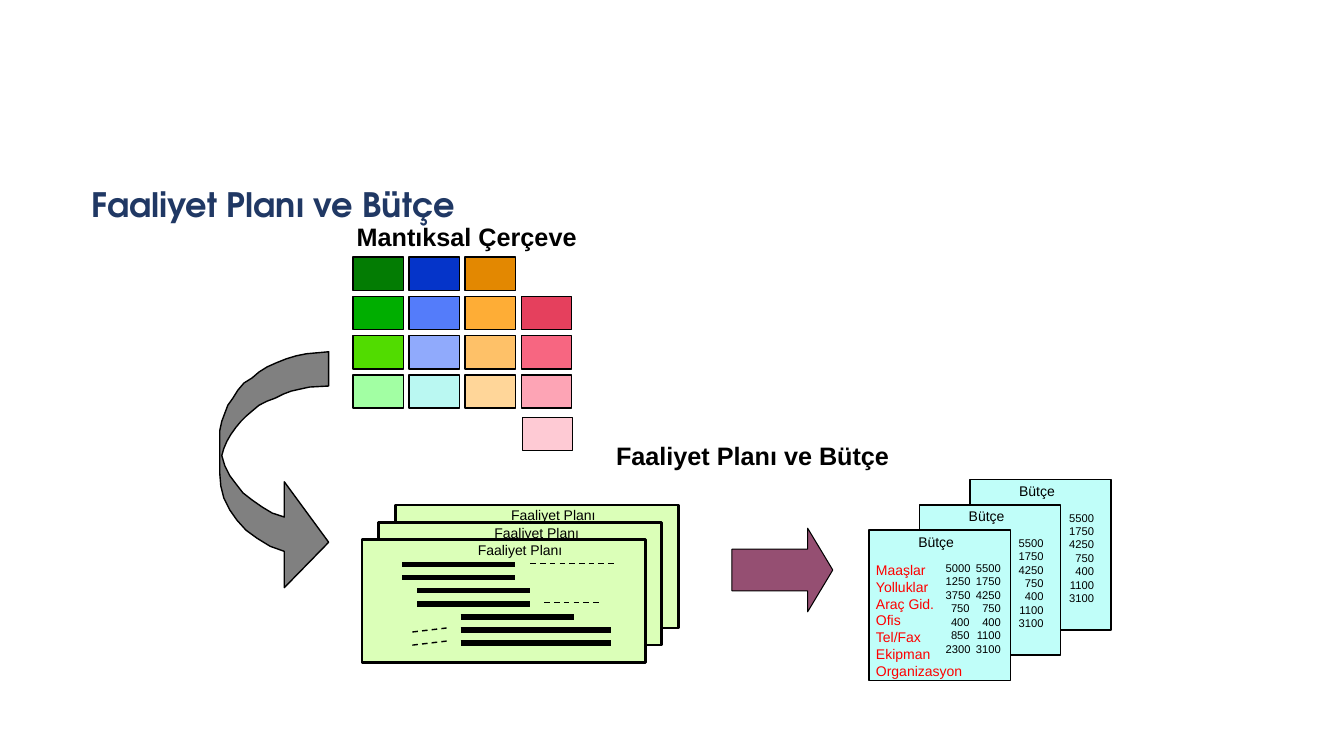
from lxml import etree
from pptx import Presentation
from pptx.dml.color import RGBColor as Rgb
from pptx.enum.dml import MSO_LINE as Dash
from pptx.enum.shapes import MSO_CONNECTOR as Link, MSO_SHAPE as Shape
from pptx.enum.text import MSO_ANCHOR as Anchor, PP_ALIGN as Align
from pptx.oxml.ns import qn
from pptx.util import Inches, Pt

# The grid: 1333 columns by 750 rows
COLS, ROWS = 1333, 750
UNIT = Inches(0.01)

HUES = {"ink": "000000", "red": "FF0000", "navy": "203864", "gray": "808080",
        "plum": "954F72", "lime": "DBFFB8", "aqua": "C0FEF9"}
# Matrix colours by row, one for each column
TILES = [("037C03", "0534C9", "E38801", None),
         ("00AE00", "547CFA", "FEAD36", "E5405D"),
         ("51DC00", "90AAFC", "FEC168", "F76681"),
         ("A2FFA3", "BAF8F2", "FFD699", "FDA4B5")]
LAST = "FECAD4"

HEAD = {"name": "Arial", "size": Pt(18), "bold": True}
LABEL = {"name": "Arial", "size": Pt(10)}
SUM = {"name": "Arial", "size": Pt(8)}
TITLE = {"name": "TeX Gyre Adventor", "size": Pt(24), "bold": True}

ITEMS = ["Maaşlar", "Yolluklar", "Araç Gid.", "Ofis", "Tel/Fax", "Ekipman",
         "Organizasyon"]
OLD = [5000, 1250, 3750, 750, 400, 850, 2300]
NEW = [5500, 1750, 4250, 750, 400, 1100, 3100]

# Bars of the plan: left, right, row
BARS = [(40, 152), (40, 152), (55, 167), (55, 167), (98, 210), (98, 247),
        (98, 247)]
DASHES = [(167, 24, 251, 24), (181, 63, 236, 63), (50, 92, 84, 88),
          (50, 105, 84, 101)]
# Outline of the bent arrow, from the top of its tail
BEND = [(108, 0), (97, 1), (86, 2), (76, 4), (66, 7), (56, 11), (47, 15),
        (39, 20), (32, 26), (24, 31), (18, 38), (13, 46), (8, 53), (5, 61),
        (2, 69), (0, 78), (0, 121), (1, 133), (4, 145), (10, 157), (17, 167),
        (26, 177), (37, 185), (50, 193), (64, 198), (64, 234), (108, 189),
        (64, 129), (64, 164), (52, 160), (42, 154), (32, 147), (23, 140),
        (16, 131), (10, 123), (5, 113), (2, 103), (4, 96), (7, 89), (11, 82),
        (16, 75), (21, 69), (26, 64), (33, 58), (39, 53), (47, 49), (55, 46),
        (63, 42), (71, 39), (80, 37), (89, 35), (108, 34)]


def grid(*cells):
    return [int(cell * UNIT) for cell in cells]


def paint(shape, fill, width=1):
    shape.shadow.inherit = False
    shape.fill.solid()
    shape.fill.fore_color.rgb = Rgb.from_string(fill)
    shape.line.color.rgb = Rgb.from_string(HUES["ink"])
    shape.line.width = Pt(width)


def block(slide, box, fill, width=1, kind=Shape.RECTANGLE):
    shape = slide.shapes.add_shape(kind, *grid(*box))
    paint(shape, fill, width)
    return shape


def stroke(slide, ends, width, dash=None):
    line = slide.shapes.add_connector(Link.STRAIGHT, *grid(*ends))
    line.line.color.rgb = Rgb.from_string(HUES["ink"])
    line.line.width = Pt(width)
    if dash:
        line.line.dash_style = dash
    etree.SubElement(line._element.spPr, qn("a:effectLst"))


def write(slide, box, lines, font, hue="ink", align=Align.LEFT, wrap=False,
          tabs=()):
    """Put one paragraph per line; tabs are right stops in grid columns."""
    frame = slide.shapes.add_textbox(*grid(*box)).text_frame
    frame.word_wrap = wrap
    frame.vertical_anchor = Anchor.TOP
    for i, line in enumerate(lines):
        para = frame.add_paragraph() if i else frame.paragraphs[0]
        para.alignment = align
        if tabs:
            stops = etree.SubElement(para._p.get_or_add_pPr(), qn("a:tabLst"))
            for stop in grid(*tabs):
                etree.SubElement(stops, qn("a:tab"), pos=str(stop), algn="r")
        run = para.add_run()
        run.text = line
        for key, value in font.items():
            setattr(run.font, key, value)
        run.font.color.rgb = Rgb.from_string(HUES[hue])


def matrix(slide, x, y):
    wide, high, across, down = 50, 33, 55.7, 39
    write(slide, (x - 6, y - 40, 240, 40), ["Mantıksal Çerçeve"], HEAD)
    for r, row in enumerate(TILES):
        for c, fill in enumerate(row):
            if fill:
                block(slide, (x + c * across, y + r * down, wide, high), fill)
    block(slide, (x + 3 * across + 1, y + 4 * down + 3, wide, high), LAST)


def sheet(slide, x, y):
    block(slide, (x, y, 281, 122), HUES["lime"], 2)
    write(slide, (x + 105, y - 3, 105, 27), ["Faaliyet Planı"], LABEL)


def plans(slide, x, y):
    """Stack three sheets towards the front one at x, y and fill that one."""
    for back in (2, 1, 0):
        sheet(slide, x + 16.5 * back, y - 17 * back)
    for i, (left, right) in enumerate(BARS):
        row = y + 25 + 13 * i
        stroke(slide, (x + left, row, x + right, row), 4)
    for a, b, c, d in DASHES:
        stroke(slide, (x + a, y + b, x + c, y + d), 1, Dash.DASH)


def budget(slide, x, y):
    block(slide, (x, y, 140, 149), HUES["aqua"])
    write(slide, (x + 39, y - 2, 56, 27), ["Bütçe"], LABEL)


def costs(slide, x, y):
    """Stack three budgets towards the front one at x, y and fill that one."""
    for back in (2, 1):
        left, top = x + 50 * back, y - 25 * back
        budget(slide, left, top)
        write(slide, (left + 66, top + 26, 67, 103), map(str, NEW), SUM,
              align=Align.RIGHT, wrap=True)
    budget(slide, x, y)
    write(slide, (x - 3, y + 26, 106, 128), ITEMS, LABEL, "red")
    sums = [f"\t{old}\t{new}" for old, new in zip(OLD, NEW)]
    write(slide, (x + 66, y + 26, 91, 103), sums, SUM, wrap=True,
          tabs=(24, 55))


def bend(slide, x, y):
    start, *rest = [(x + dx, y + dy) for dx, dy in BEND]
    path = slide.shapes.build_freeform(*start, scale=UNIT)
    path.add_line_segments(rest, close=True)
    paint(path.convert_to_shape(), HUES["gray"])


def arrow(slide, x, y):
    shape = block(slide, (x, y, 100, 83), HUES["plum"], 0.75,
                  Shape.RIGHT_ARROW)
    shape.adjustments[0], shape.adjustments[1] = 0.5, 0.3


def main():
    deck = Presentation()
    deck.slide_width, deck.slide_height = grid(COLS, ROWS)
    slide = deck.slides.add_slide(deck.slide_layouts[6])
    name = "Faaliyet Planı ve Bütçe"
    matrix(slide, 350, 255)
    costs(slide, 862, 526)
    plans(slide, 359, 535)
    write(slide, (596, 432, 301, 40), [name], HEAD, align=Align.CENTER)
    bend(slide, 218, 349)
    arrow(slide, 726, 524)
    write(slide, (79, 178, 384, 50), [name], TITLE, "navy", Align.CENTER, True)
    deck.save("out.pptx")


if __name__ == "__main__":
    main()
